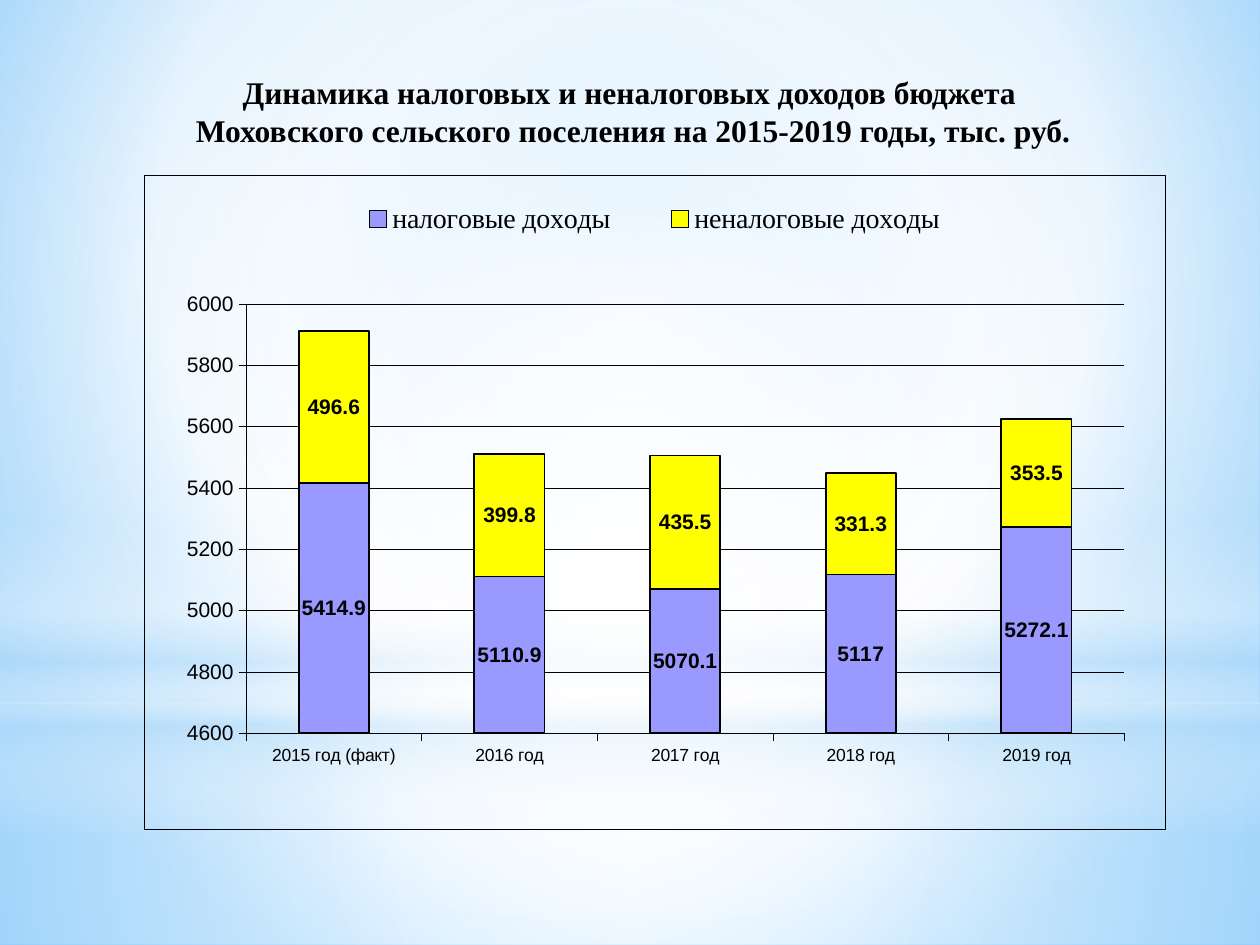
from dataclasses import dataclass

from pptx import Presentation
from pptx.chart.data import CategoryChartData
from pptx.dml.color import RGBColor
from pptx.enum.chart import XL_CHART_TYPE, XL_LEGEND_POSITION, XL_TICK_LABEL_POSITION, XL_TICK_MARK
from pptx.enum.shapes import MSO_SHAPE
from pptx.enum.text import MSO_ANCHOR, PP_ALIGN
from pptx.oxml import parse_xml
from pptx.oxml.ns import nsdecls, qn
from pptx.util import Inches, Pt


@dataclass(frozen=True)
class Theme:
    black: str = "000000"
    white: str = "FFFFFF"
    haze: str = "B4DCFA"
    sky: str = "9ED5FF"
    deep_sky: str = "5BB9FF"
    tax: str = "9999FF"
    non_tax: str = "FFFF00"
    serif: str = "Times New Roman"
    sans: str = "Arial"
    title_size: int = 18
    legend_size: int = 16
    value_size: int = 12
    category_size: int = 10
    hairline: float = 0.25
    bar_line: float = 1


theme = Theme()
WIDTH, HEIGHT = Inches(10), Inches(7.5)

TITLE = "Динамика налоговых и неналоговых доходов бюджета\v Моховского сельского поселения на 2015-2019 годы, тыс. руб."
CATEGORIES = ["2015 год (факт)", "2016 год", "2017 год", "2018 год", "2019 год"]
SERIES = [
    ("налоговые доходы", [5414.9, 5110.9, 5070.1, 5117, 5272.1], theme.tax),
    ("неналоговые доходы", [496.6, 399.8, 435.5, 331.3, 353.5], theme.non_tax),
]

CENTER = (50, 50, 50, 50)
BACKGROUND_STOPS = [(0, theme.sky, 100), (60, theme.white, 100), (100, theme.deep_sky, 100)]
BACKGROUND_FOCUS = (20, 10, 20, 60)
GLOWS = [
    (MSO_SHAPE.RECTANGLE, 0.744, 0.256, CENTER,
     [(0, theme.white, 91), (37, theme.white, 76), (100, theme.haze, 79)]),
    (MSO_SHAPE.RECTANGLE, 0, 0.744, CENTER,
     [(0, theme.white, 89), (48, theme.white, 62), (100, theme.haze, 79)]),
    (MSO_SHAPE.RECTANGLE, 0.55, 0.333, None,
     [(0, theme.white, 0), (29, theme.white, 30), (45, theme.haze, 40),
      (55, theme.white, 26), (65, theme.haze, 60), (100, theme.white, 0)]),
    (MSO_SHAPE.OVAL, 0.233, 0.744, CENTER,
     [(0, theme.white, 100), (56, theme.white, 0)]),
]
TITLE_BOX = (0.098, 0.07, 0.803, 0.095)
CHART_BOX = (0.114, 0.185, 0.811, 0.693)
PLOT_BOX = (0.1, 0.197, 0.86, 0.656)
LEGEND_BOX = (0.17, 0.03, 0.66, 0.075)


def place(box):
    left, top, width, height = box
    return int(left * WIDTH), int(top * HEIGHT), int(width * WIDTH), int(height * HEIGHT)


def set_gradient(owner, stops, focus):
    stop_xml = "".join(
        f'<a:gs pos="{position * 1000}"><a:srgbClr val="{color}">'
        f'<a:alpha val="{opacity * 1000}"/></a:srgbClr></a:gs>'
        for position, color, opacity in stops
    )
    if focus:
        left, top, right, bottom = (share * 1000 for share in focus)
        shade = (f'<a:path path="circle"><a:fillToRect l="{left}" t="{top}" '
                 f'r="{right}" b="{bottom}"/></a:path>')
    else:
        shade = '<a:lin ang="5400000" scaled="0"/>'
    gradient = parse_xml(
        f'<a:gradFill {nsdecls("a")} rotWithShape="1"><a:gsLst>{stop_xml}</a:gsLst>{shade}</a:gradFill>'
    )
    solid = owner.find(qn("a:solidFill"))
    owner.replace(solid, gradient)


def set_font(font, name, size, bold=False):
    font.name, font.size, font.bold = name, Pt(size), bold
    font.color.rgb = RGBColor.from_string(theme.black)


def set_line(line, width):
    line.color.rgb = RGBColor.from_string(theme.black)
    line.width = Pt(width)


def set_layout(element, box, index, target=""):
    for layout in element.findall(qn("c:layout")):
        element.remove(layout)
    modes = "".join(f'<c:{side}Mode val="edge"/>' for side in "xy")
    sizes = "".join(f'<c:{side} val="{share}"/>' for side, share in zip("xywh", box))
    element.insert(index, parse_xml(
        f'<c:layout {nsdecls("c")}><c:manualLayout>{target}{modes}{sizes}</c:manualLayout></c:layout>'
    ))


def add_backdrop(slide):
    slide.background.fill.solid()
    set_gradient(slide.element.find(".//" + qn("p:bgPr")), BACKGROUND_STOPS, BACKGROUND_FOCUS)
    for kind, top, height, focus, stops in GLOWS:
        glow = slide.shapes.add_shape(kind, *place((0, top, 1, height)))
        glow.shadow.inherit = False
        glow.line.fill.background()
        glow.fill.solid()
        set_gradient(glow.element.spPr, stops, focus)


def add_title(slide):
    title = slide.shapes.title
    slide.shapes.element.append(title.element)
    title.left, title.top, title.width, title.height = place(TITLE_BOX)
    frame = title.text_frame
    frame.word_wrap = True
    frame.vertical_anchor = MSO_ANCHOR.MIDDLE
    frame.text = TITLE
    paragraph = frame.paragraphs[0]
    paragraph.alignment = PP_ALIGN.CENTER
    set_font(paragraph.font, theme.serif, theme.title_size, True)


def add_revenue_chart(slide):
    data = CategoryChartData()
    data.categories = CATEGORIES
    for name, values, _ in SERIES:
        data.add_series(name, values)
    chart = slide.shapes.add_chart(XL_CHART_TYPE.COLUMN_STACKED, *place(CHART_BOX), data).chart
    chart.has_title = False
    set_font(chart.font, theme.sans, theme.category_size)
    chart.element.find(qn("c:chart")).addnext(parse_xml(
        f'<c:spPr {nsdecls("c", "a")}><a:noFill/><a:ln w="{Pt(theme.hairline)}"><a:solidFill>'
        f'<a:srgbClr val="{theme.black}"/></a:solidFill></a:ln></c:spPr>'
    ))

    chart.has_legend = True
    chart.legend.position = XL_LEGEND_POSITION.TOP
    chart.legend.include_in_layout = False
    set_font(chart.legend.font, theme.serif, theme.legend_size)
    set_layout(chart.legend._element, LEGEND_BOX, 1)
    plot_area = chart.element.find(".//" + qn("c:plotArea"))
    set_layout(plot_area, PLOT_BOX, 0, '<c:layoutTarget val="inner"/>')

    for axis, size in ((chart.category_axis, theme.category_size), (chart.value_axis, theme.value_size)):
        axis.major_tick_mark = XL_TICK_MARK.OUTSIDE
        axis.minor_tick_mark = XL_TICK_MARK.NONE
        set_font(axis.tick_labels.font, theme.sans, size)
        set_line(axis.format.line, theme.hairline)
    chart.category_axis.tick_label_position = XL_TICK_LABEL_POSITION.LOW
    values = chart.value_axis
    values.minimum_scale, values.maximum_scale, values.major_unit = 4600, 6000, 200
    values.has_major_gridlines = True
    set_line(values.major_gridlines.format.line, theme.hairline)

    plot = chart.plots[0]
    plot.gap_width, plot.overlap, plot.vary_by_categories = 150, 100, False
    for series, (_, _, color) in zip(plot.series, SERIES):
        series.format.fill.solid()
        series.format.fill.fore_color.rgb = RGBColor.from_string(color)
        set_line(series.format.line, theme.bar_line)
        series.data_labels.show_value = True
        set_font(series.data_labels.font, theme.sans, theme.value_size, True)


def main():
    presentation = Presentation()
    presentation.slide_width, presentation.slide_height = WIDTH, HEIGHT
    slide = presentation.slides.add_slide(presentation.slide_layouts[5])
    add_backdrop(slide)
    add_title(slide)
    add_revenue_chart(slide)
    presentation.save("out.pptx")


if __name__ == "__main__":
    main()
